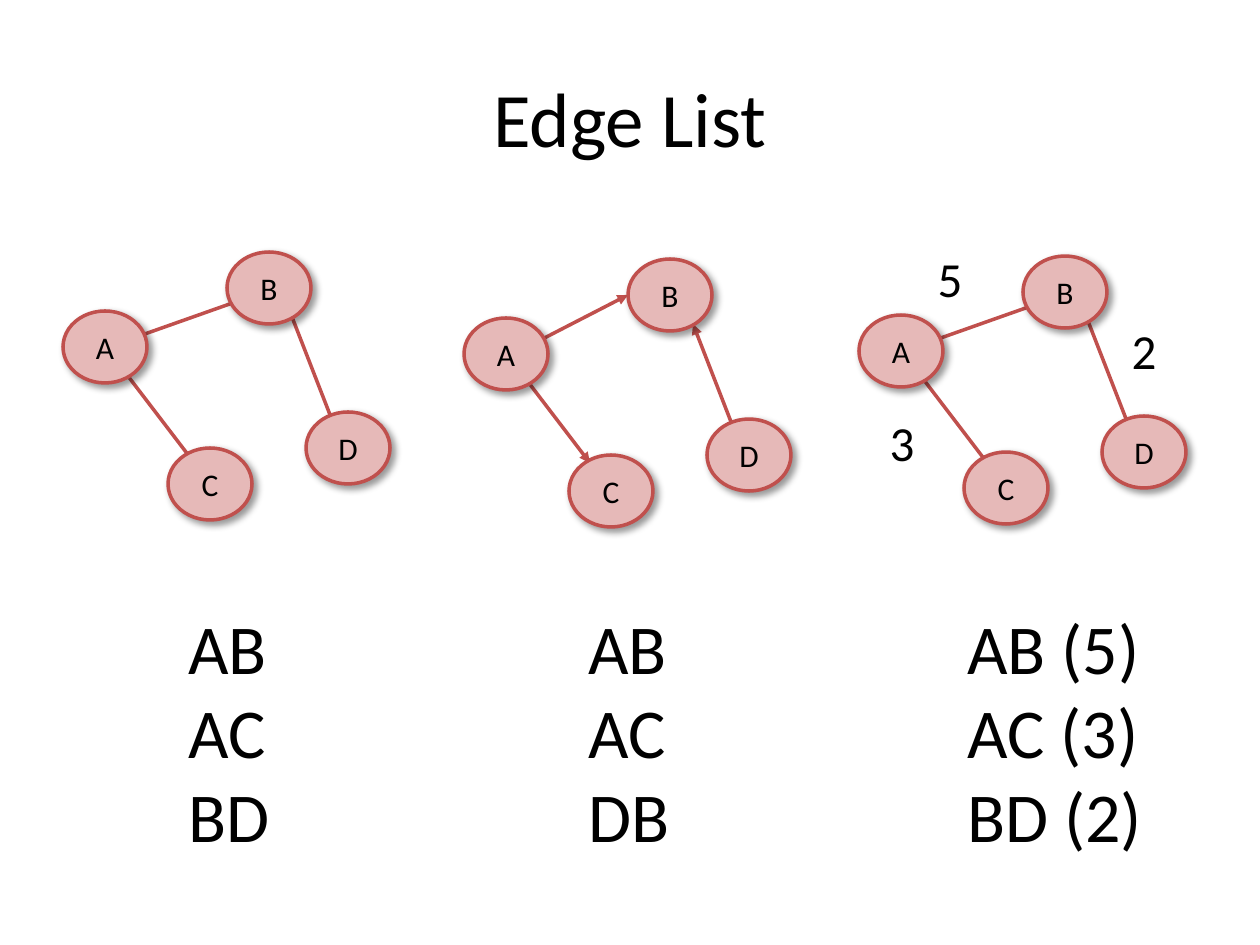
from lxml import etree
from pptx import Presentation
from pptx import util as u
from pptx.dml.color import RGBColor
from pptx.enum import shapes, text
from pptx.oxml import parse_xml
from pptx.oxml.ns import nsdecls, qn

EMU_PER_PX = 914400 / 126
THEME = {
    "font": "Calibri",
    "ink": RGBColor.from_string("000000"),
    "node": RGBColor.from_string("E6B9B8"),
    "edge": RGBColor.from_string("C0504D"),
    "line": u.Pt(2),
    "title": u.Pt(44),
    "list": u.Pt(40),
    "weight": u.Pt(28),
    "label": u.Pt(18),
}
SHADOW = (
    f'<a:outerShdw {nsdecls("a")} blurRad="50800" dist="38100" dir="2700000" algn="tl" rotWithShape="0">'
    '<a:srgbClr val="000000"><a:alpha val="40000"/></a:srgbClr></a:outerShdw>'
)

# Node and edge positions are measured from the top left corner of node A.
NODE_SIZE = (84, 72)
NODES = {"B": (164, -59), "D": (243, 101), "A": (0, 0), "C": (105, 137)}
EDGES = [(42, 35, 126, 145), (62, 30, 229, -29), (278, 132, 229, 6)]
DIRECTED_EDGES = [EDGES[0], (61, 30, 164, -23), EDGES[2]]
WEIGHTS = {"3": (-10, 91), "5": (38, -73), "2": (232, -1)}

GRAPHS = [
    {"origin": (63, 311), "edges": EDGES, "directed": False, "weights": {},
     "list": ["AB", "AC", "BD"], "list_x": 176, "list_w": 136},
    {"origin": (859, 315), "edges": EDGES, "directed": False, "weights": WEIGHTS,
     "list": ["AB (5)", "AC (3)", "BD (2)"], "list_x": 955, "list_w": 210},
    {"origin": (464, 318), "edges": DIRECTED_EDGES, "directed": True, "weights": {},
     "list": ["AB", "AC", "DB"], "list_x": 576, "list_w": 184},
]


def px(*lengths):
    return [u.Emu(round(n * EMU_PER_PX)) for n in lengths]


def write(sp, lines, size, align=text.PP_ALIGN.CENTER, anchor=text.MSO_ANCHOR.TOP):
    tf = sp.text_frame
    tf.word_wrap = True
    tf.vertical_anchor = anchor
    tf.text = "\n".join(lines)
    for p in tf.paragraphs:
        p.alignment = align
        font = p.runs[0].font
        for name, value in {"name": THEME["font"], "size": THEME[size]}.items():
            setattr(font, name, value)
        font.color.rgb = THEME["ink"]


prs = Presentation()
prs.slide_width, prs.slide_height = px(1260, 945)
s = prs.slides.add_slide(prs.slide_layouts[6])

title = s.shapes.add_textbox(*px(63, 38, 1134, 157))
write(title, ["Edge List"], "title", anchor=text.MSO_ANCHOR.MIDDLE)

for graph in GRAPHS:
    x, y = graph["origin"]

    for x1, y1, x2, y2 in graph["edges"]:
        edge = s.shapes.add_connector(
            shapes.MSO_CONNECTOR.STRAIGHT, *px(x + x1, y + y1, x + x2, y + y2))
        edge.line.color.rgb = THEME["edge"]
        edge.line.width = THEME["line"]
        if graph["directed"]:
            etree.SubElement(edge.line._get_or_add_ln(), qn("a:tailEnd"), type="triangle")
        etree.SubElement(edge._element.spPr, qn("a:effectLst"))

    for name, (dx, dy) in NODES.items():
        node = s.shapes.add_shape(shapes.MSO_SHAPE.OVAL, *px(x + dx, y + dy, *NODE_SIZE))
        node.fill.solid()
        node.fill.fore_color.rgb = THEME["node"]
        node.line.color.rgb = THEME["edge"]
        node.line.width = THEME["line"]
        node.shadow.inherit = False
        node._element.spPr.find(qn("a:effectLst")).append(parse_xml(SHADOW))
        write(node, [name], "label", anchor=text.MSO_ANCHOR.MIDDLE)

    edge_list = s.shapes.add_textbox(*px(graph["list_x"], 598, graph["list_w"], 267))
    write(edge_list, graph["list"], "list", align=text.PP_ALIGN.LEFT)

    for weight, (dx, dy) in graph["weights"].items():
        write(s.shapes.add_textbox(*px(x + dx, y + dy, 106, 72)), [weight], "weight")

prs.save("out.pptx")
